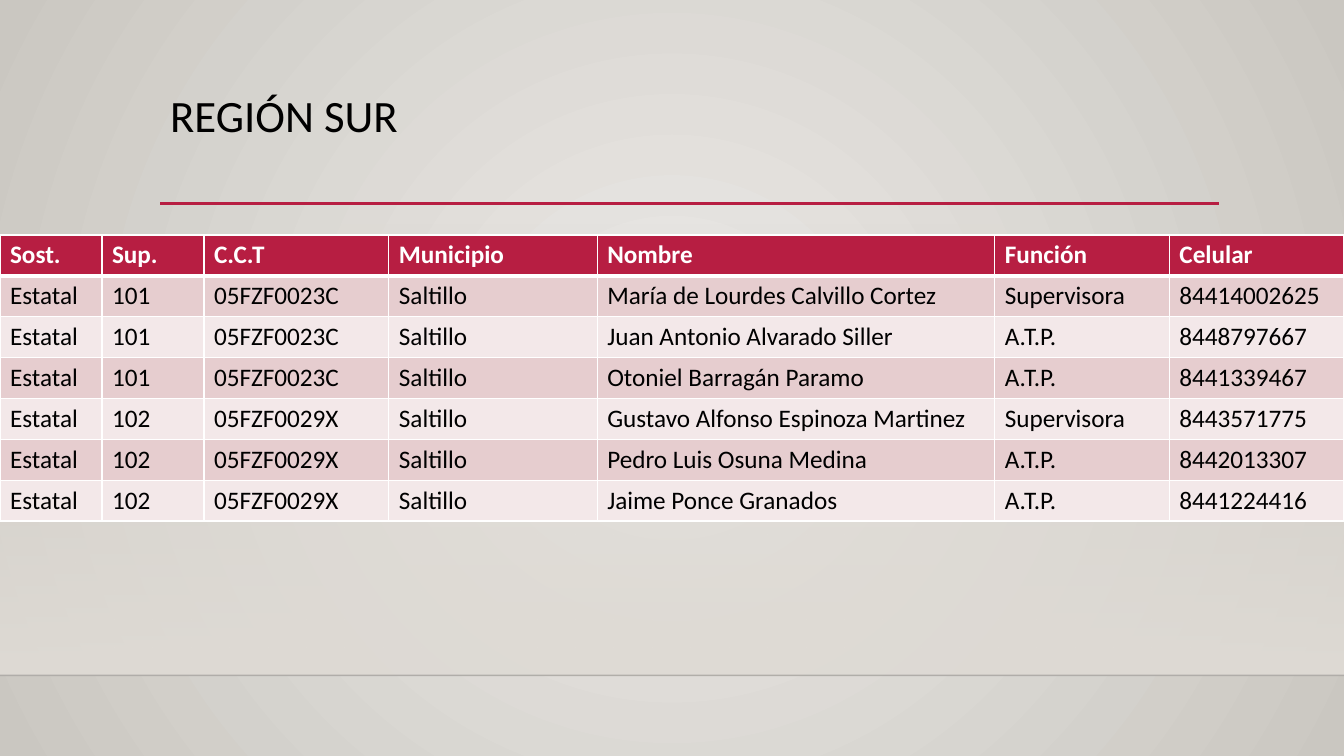
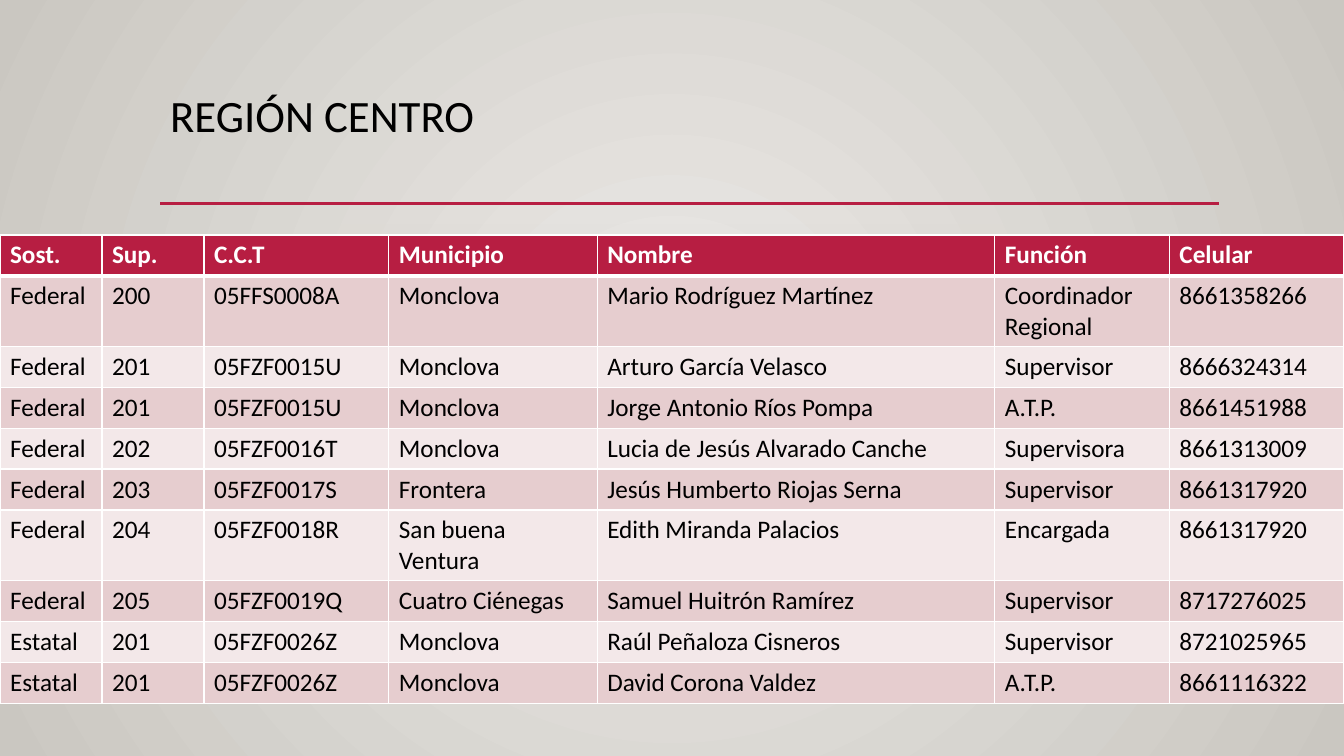
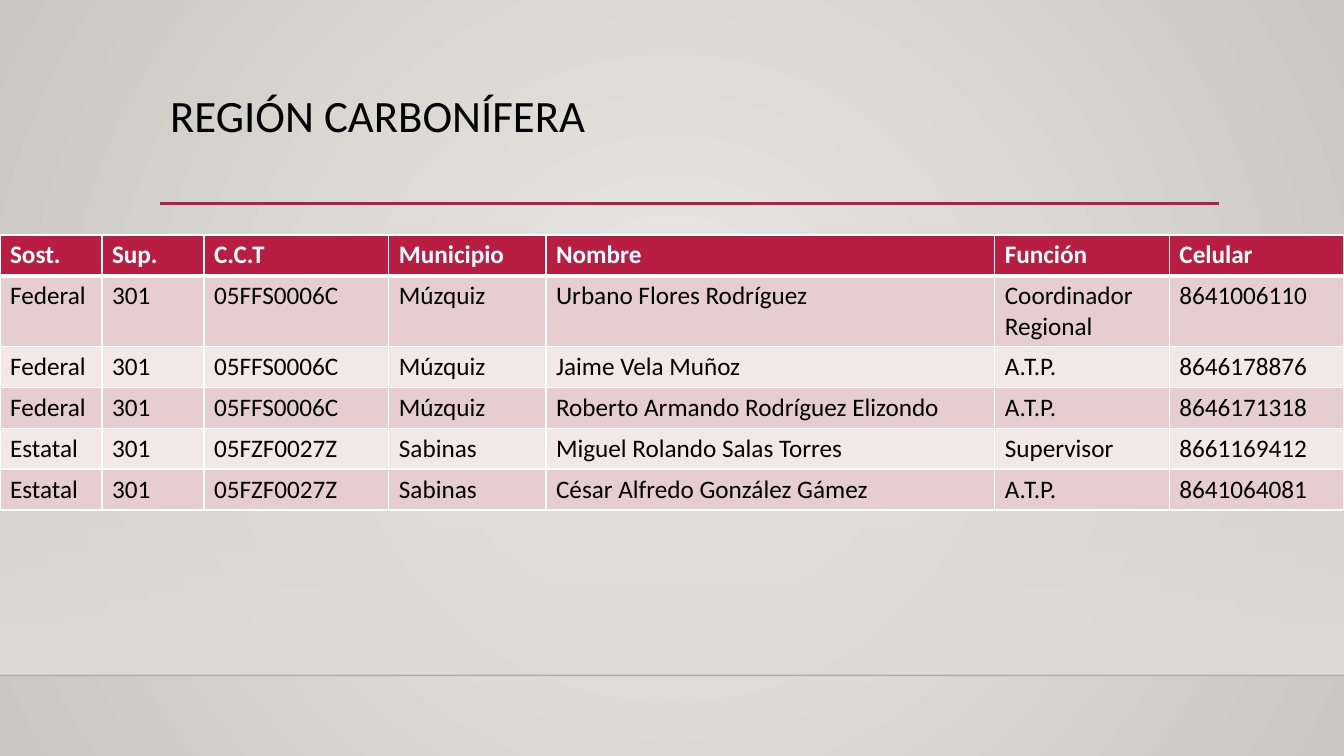
from lxml import etree
from pptx import Presentation
from pptx import util as u
from pptx.dml.color import RGBColor
from pptx.enum import shapes, text
from pptx.oxml.ns import qn

HEADINGS = ["Sost.", "Sup.", "C.C.T", "Municipio", "Nombre", "Función", "Celular"]

# Each zone: (sost., sup., C.C.T, municipio) and its staff (nombre, función, celular).
REGIONS = [
    {"title": "REGIÓN SUR", "town_width": 5.25, "zones": [
        (("Estatal", "101", "05FZF0023C", "Saltillo"), [
            ("María de Lourdes Calvillo Cortez", "Supervisora", "84414002625"),
            ("Juan Antonio Alvarado Siller", "A.T.P.", "8448797667"),
            ("Otoniel Barragán Paramo", "A.T.P.", "8441339467")]),
        (("Estatal", "102", "05FZF0029X", "Saltillo"), [
            ("Gustavo Alfonso Espinoza Martinez", "Supervisora", "8443571775"),
            ("Pedro Luis Osuna Medina", "A.T.P.", "8442013307"),
            ("Jaime Ponce Granados", "A.T.P.", "8441224416")]),
    ]},
    {"title": "REGIÓN CENTRO", "town_width": 5.25, "zones": [
        (("Federal", "200", "05FFS0008A", "Monclova"), [
            ("Mario Rodríguez Martínez", "Coordinador Regional", "8661358266")]),
        (("Federal", "201", "05FZF0015U", "Monclova"), [
            ("Arturo García Velasco", "Supervisor", "8666324314"),
            ("Jorge Antonio Ríos Pompa", "A.T.P.", "8661451988")]),
        (("Federal", "202", "05FZF0016T", "Monclova"), [
            ("Lucia de Jesús Alvarado Canche", "Supervisora", "8661313009")]),
        (("Federal", "203", "05FZF0017S", "Frontera"), [
            ("Jesús Humberto Riojas Serna", "Supervisor", "8661317920")]),
        (("Federal", "204", "05FZF0018R", "San buena Ventura"), [
            ("Edith Miranda Palacios", "Encargada", "8661317920")]),
        (("Federal", "205", "05FZF0019Q", "Cuatro Ciénegas"), [
            ("Samuel Huitrón Ramírez", "Supervisor", "8717276025")]),
        (("Estatal", "201", "05FZF0026Z", "Monclova"), [
            ("Raúl Peñaloza Cisneros", "Supervisor", "8721025965"),
            ("David Corona Valdez", "A.T.P.", "8661116322")]),
    ]},
    {"title": "REGIÓN CARBONÍFERA", "town_width": 3.96, "zones": [
        (("Federal", "301", "05FFS0006C", "Múzquiz"), [
            ("Urbano Flores Rodríguez", "Coordinador Regional", "8641006110"),
            ("Jaime Vela Muñoz", "A.T.P.", "8646178876"),
            ("Roberto Armando Rodríguez Elizondo", "A.T.P.", "8646171318")]),
        (("Estatal", "301", "05FZF0027Z", "Sabinas"), [
            ("Miguel Rolando Salas Torres", "Supervisor", "8661169412"),
            ("César Alfredo González Gámez", "A.T.P.", "8641064081")]),
    ]},
]

FONT = "Calibri"
RED, WHITE, BLACK, SAND = "B71E42", "FFFFFF", "000000", "DFDBD5"
BANDS = ["E6CDCF", "F3E8E9"]
SLIDE_WIDTH, SLIDE_HEIGHT = 33.87, 19.05
MARGIN, RULE_RIGHT, RULE_TOP = 4.04, 30.73, 5.13
FLOOR_TOP, FLOOR_LINE = 5.61, 17.02
TABLE_TOP, ROW_HEIGHT = 5.92, 1.03


def color(value):
    return RGBColor.from_string(value)


def add_child(parent, tag, **attributes):
    return etree.SubElement(parent, qn(tag), attributes)


def add_color(parent, value, alpha=100):
    node = add_child(parent, "a:srgbClr", val=value)
    if alpha < 100:
        add_child(node, "a:alpha", val=str(alpha * 1000))


def paint_gradient(properties, stops, round_center=False):
    """Replace the solid fill by a gradient of (color, opacity) stops, evenly spread."""
    solid = properties.find(qn("a:solidFill"))
    gradient = etree.Element(qn("a:gradFill"), rotWithShape="1")
    stop_list = add_child(gradient, "a:gsLst")
    for index, (value, alpha) in enumerate(stops):
        position = index * 100000 // (len(stops) - 1)
        add_color(add_child(stop_list, "a:gs", pos=str(position)), value, alpha)
    if round_center:
        focus = add_child(gradient, "a:path", path="circle")
        add_child(focus, "a:fillToRect", l="50000", t="50000", r="50000", b="50000")
    else:
        add_child(gradient, "a:lin", ang="5400000", scaled="0")
    properties.replace(solid, gradient)


def set_background(master):
    master.background.fill.solid()
    properties = master.element.find(".//" + qn("p:bgPr"))
    paint_gradient(properties, [("ECEAE7", 100), ("CAC7C1", 100)], round_center=True)


def style(paragraph, size, value, bold=False):
    font = paragraph.font
    font.name, font.size, font.bold = FONT, u.Pt(size), bold
    font.color.rgb = color(value)


def add_rule(slide, left, right, top, value, width, alpha=100):
    line = slide.shapes.add_connector(
        shapes.MSO_CONNECTOR.STRAIGHT, u.Cm(left), u.Cm(top), u.Cm(right), u.Cm(top))
    line.line.width = u.Pt(width)
    line.line.color.rgb = color(value)
    properties = line.element.spPr
    if alpha < 100:
        add_child(properties.find(".//" + qn("a:srgbClr")), "a:alpha", val=str(alpha * 1000))
    add_child(properties, "a:effectLst")


def add_scenery(slide):
    floor = slide.shapes.add_shape(
        shapes.MSO_SHAPE.RECTANGLE, 0, u.Cm(FLOOR_TOP),
        u.Cm(SLIDE_WIDTH), u.Cm(FLOOR_LINE - FLOOR_TOP))
    floor.shadow.inherit = False
    floor.line.fill.background()
    floor.fill.solid()
    paint_gradient(floor.element.spPr, [(SAND, 0), (SAND, 100)])
    add_rule(slide, 0, SLIDE_WIDTH, FLOOR_LINE, "000001", 1, alpha=20)
    add_rule(slide, MARGIN, RULE_RIGHT, RULE_TOP, RED, 2.5)


def add_title(slide, title):
    box = slide.shapes.add_textbox(u.Cm(MARGIN), u.Cm(2.24), u.Cm(26.67), u.Cm(2.92))
    frame = box.text_frame
    frame.word_wrap = True
    frame.vertical_anchor = text.MSO_ANCHOR.TOP
    paragraph = frame.paragraphs[0]
    paragraph.text = title
    paragraph.line_spacing = 0.9
    style(paragraph, 32, BLACK)


def set_borders(cell, top=1, bottom=1):
    properties = cell._tc.get_or_add_tcPr()
    for side, width in [("L", 1), ("R", 1), ("T", top), ("B", bottom)]:
        border = add_child(properties, "a:ln" + side, w=str(u.Pt(width)))
        add_color(add_child(border, "a:solidFill"), WHITE)


def add_directory(slide, zones, town_width):
    rows = [HEADINGS] + [zone + person for zone, staff in zones for person in staff]
    widths = [2.57, 2.57, 4.66, town_width, 0, 4.4, 4.4]
    widths[HEADINGS.index("Nombre")] = SLIDE_WIDTH - sum(widths)
    table = slide.shapes.add_table(
        len(rows), len(HEADINGS), 0, u.Cm(TABLE_TOP),
        u.Cm(SLIDE_WIDTH), u.Cm(ROW_HEIGHT * len(rows))).table
    for column, width in zip(table.columns, widths):
        column.width = u.Cm(width)
    for index, values in enumerate(rows):
        header = index == 0
        for cell, value in zip(table.rows[index].cells, values):
            set_borders(cell, top=3 if index == 1 else 1, bottom=3 if header else 1)
            cell.fill.solid()
            cell.fill.fore_color.rgb = color(RED if header else BANDS[(index - 1) % 2])
            cell.text = value
            style(cell.text_frame.paragraphs[0], 18, WHITE if header else BLACK, header)


def main():
    deck = Presentation()
    deck.slide_width, deck.slide_height = u.Cm(SLIDE_WIDTH), u.Cm(SLIDE_HEIGHT)
    set_background(deck.slide_master)
    for region in REGIONS:
        slide = deck.slides.add_slide(deck.slide_layouts[6])
        add_scenery(slide)
        add_title(slide, region["title"])
        add_directory(slide, region["zones"], region["town_width"])
    deck.save("out.pptx")


if __name__ == "__main__":
    main()
